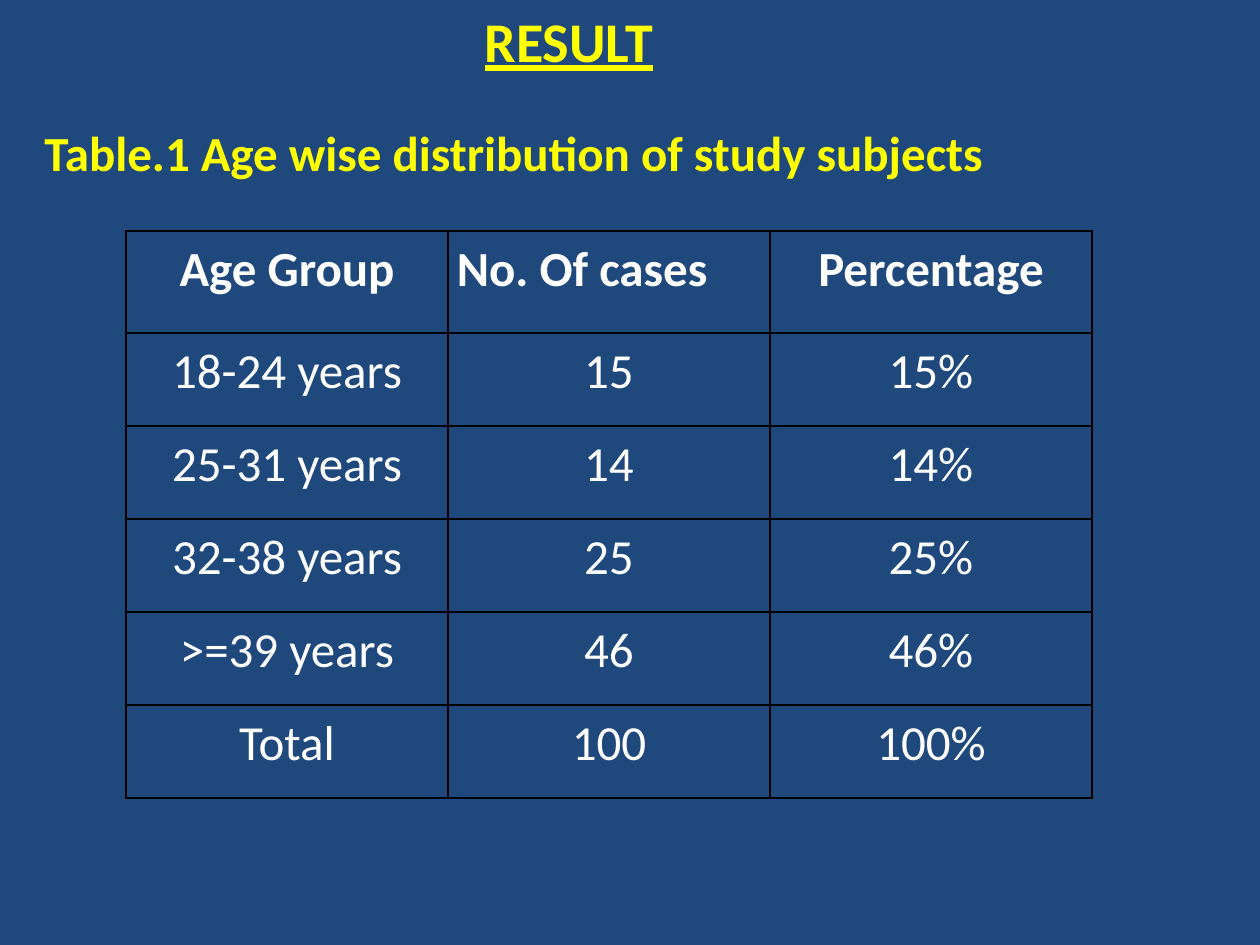
from lxml import etree
from pptx import Presentation
from pptx.dml.color import RGBColor
from pptx.enum.text import MSO_ANCHOR, PP_ALIGN
from pptx.oxml.ns import qn
from pptx.util import Pt

LEFT, CENTER = PP_ALIGN.LEFT, PP_ALIGN.CENTER
TOP = MSO_ANCHOR.TOP
EMU_PER_PX = 914400 / 126
FONT = "Calibri"
COLORS = {"background": "1F497D", "heading": "FFFF00", "text": "FFFFFF", "border": "000000"}

TITLE_ONLY = 5
COL_W, HEADER_H, ROW_H = 322, 102, 93
ROWS = [
    ("Age Group", "No. Of cases", "Percentage"),
    ("18-24 years", "15", "15%"),
    ("25-31 years", "14", "14%"),
    ("32-38 years", "25", "25%"),
    (">=39 years", "46", "46%"),
    ("Total", "100", "100%"),
]


def px(n):
    return round(n * EMU_PER_PX)


def rgb(name):
    return RGBColor.from_string(COLORS[name])


def write(tf, text, size, color, bold=False, underline=False, align=LEFT):
    tf.text = text
    tf.word_wrap = True
    p = tf.paragraphs[0]
    p.alignment = align
    p.font.name, p.font.size = FONT, Pt(size)
    p.font.bold, p.font.underline = bold, underline
    p.font.color.rgb = rgb(color)
    return p


def add_title(s, text, x, y, w, h):
    sp = s.shapes.title
    sp.left, sp.top, sp.width, sp.height = map(px, (x, y, w, h))
    write(sp.text_frame, text, 32, "heading", bold=True, underline=True)
    sp.text_frame.vertical_anchor = TOP


def add_caption(s, text, x, y, w, h):
    sp = s.shapes.add_textbox(*map(px, (x, y, w, h)))
    write(sp.text_frame, text, 28, "heading", bold=True)


def add_borders(cell):
    tc_pr = cell._tc.get_or_add_tcPr()
    for side in ("lnL", "lnR", "lnT", "lnB"):
        ln = etree.SubElement(tc_pr, qn(f"a:{side}"), w=str(Pt(1)))
        fill = etree.SubElement(ln, qn("a:solidFill"))
        etree.SubElement(fill, qn("a:srgbClr"), val=COLORS["border"])


def format_cell(cell, text, bold, align):
    cell.margin_left = cell.margin_right = px(9)
    cell.margin_top = cell.margin_bottom = 0
    cell.vertical_anchor = TOP
    p = write(cell.text_frame, text, 28, "text", bold=bold, align=align)
    p.line_spacing = 1.15
    add_borders(cell)
    cell.fill.background()


def add_age_table(s, x, y):
    heights = [HEADER_H] + [ROW_H] * (len(ROWS) - 1)
    n_cols = len(ROWS[0])
    frame = s.shapes.add_table(len(ROWS), n_cols, px(x), px(y),
                               px(COL_W * n_cols), px(sum(heights)))
    table = frame.table
    table.first_row = table.horz_banding = False
    for col in table.columns:
        col.width = px(COL_W)
    for r, (values, height) in enumerate(zip(ROWS, heights)):
        table.rows[r].height = px(height)
        for c, value in enumerate(values):
            # Only the middle header is left-aligned
            align = LEFT if (r, c) == (0, 1) else CENTER
            format_cell(table.cell(r, c), value, r == 0, align)


def main():
    prs = Presentation()
    prs.slide_width, prs.slide_height = px(1260), px(945)
    s = prs.slides.add_slide(prs.slide_layouts[TITLE_ONLY])
    s.background.fill.solid()
    s.background.fill.fore_color.rgb = rgb("background")

    # Headings
    add_title(s, "RESULT", 472, 0, 315, 80)
    add_caption(s, "Table.1 Age wise distribution of study subjects", 32, 116, 1228, 186)

    # Age distribution
    add_age_table(s, 126, 231)
    prs.save("out.pptx")


if __name__ == "__main__":
    main()
